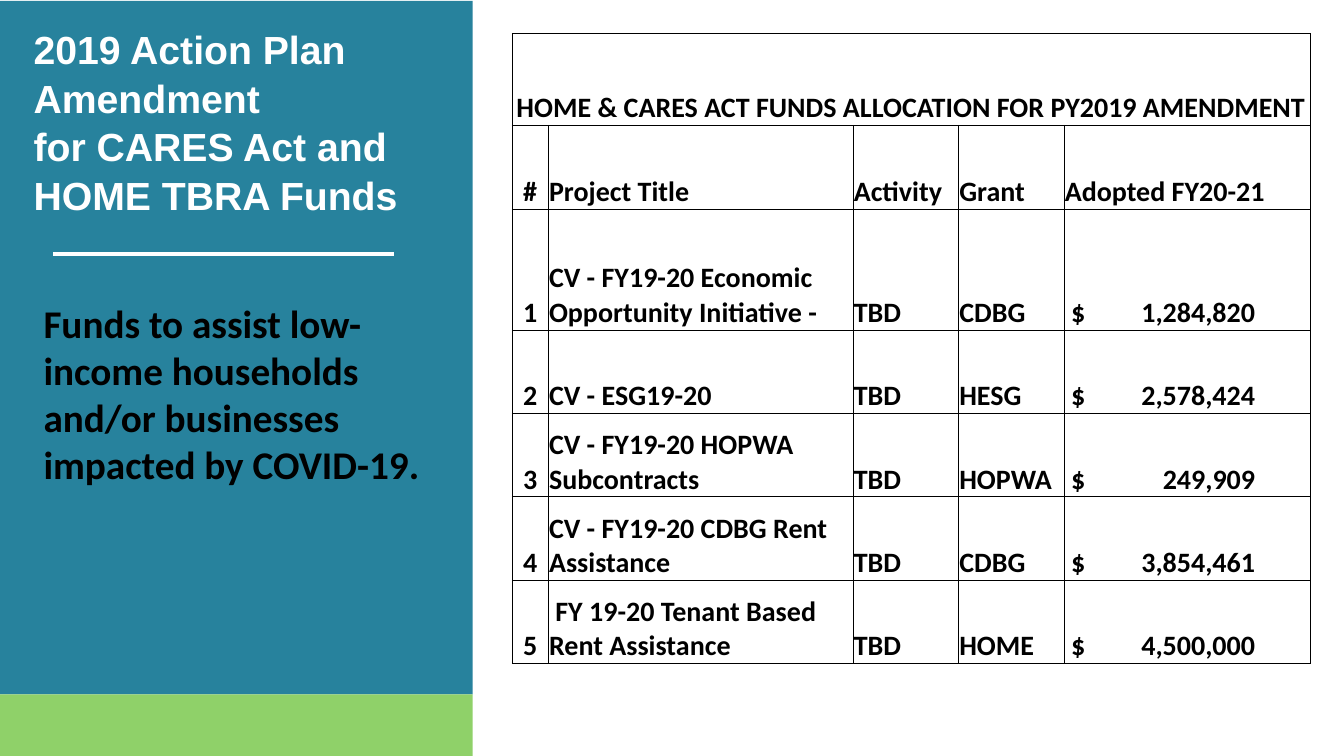
from lxml import etree
from pptx import Presentation
from pptx.dml.color import RGBColor
from pptx.enum import shapes, text
from pptx.oxml import ns
from pptx.util import Pt

TEAL = RGBColor(0x27, 0x82, 0x9D)
GREEN = RGBColor(0x8F, 0xD1, 0x69)
WHITE = RGBColor(0xFF, 0xFF, 0xFF)
BLACK = RGBColor(0x00, 0x00, 0x00)

TITLE = "2019 Action Plan Amendment \vfor CARES Act and HOME TBRA Funds"
PURPOSE = "Funds to assist low-income households and/or businesses impacted by COVID-19."
TABLE_TITLE = "HOME & CARES ACT FUNDS ALLOCATION FOR PY2019 AMENDMENT"
HEADERS = ("#", "Project Title", "Activity", "Grant", "Adopted FY20-21")
PROJECTS = [
    ("CV - FY19-20 Economic Opportunity Initiative -", "CDBG", "1,284,820"),
    ("CV - ESG19-20", "HESG", "2,578,424"),
    ("CV - FY19-20 HOPWA Subcontracts", "HOPWA", "249,909"),
    ("CV - FY19-20 CDBG Rent Assistance", "CDBG", "3,854,461"),
    (" FY 19-20 Tenant Based Rent Assistance", "HOME", "4,500,000"),
]
ACTIVITY = "TBD"

SLIDE_WIDTH, SLIDE_HEIGHT = 960, 540
PANEL_WIDTH, PANEL_TOP, PANEL_BOTTOM = 337.7, 0.7, 496
COLUMN_WIDTHS = (25.7, 217.7, 75.4, 75.4, 175.8)
ROW_HEIGHTS = (65.7, 59.7, 86.4) + (59.6,) * 4
AMOUNT_INDENT, AMOUNT_TAB = 5.3, 131.5


def write(frame, content, size=20, font="Calibri", color=BLACK,
          align=text.PP_ALIGN.LEFT, margins=(7.2, 3.6, 7.2, 3.6),
          line_spacing=None, space_before=None):
    """Fill a text frame with one bold paragraph; margins run left, top, right, bottom."""
    frame.word_wrap = True
    frame.margin_left, frame.margin_top, frame.margin_right, frame.margin_bottom = map(Pt, margins)
    paragraph = frame.paragraphs[0]
    paragraph.text = content
    paragraph.alignment = align
    if line_spacing:
        paragraph.line_spacing = Pt(line_spacing)
    if space_before:
        paragraph.space_before = Pt(space_before)
    for run in paragraph.runs:
        run.font.size = Pt(size)
        run.font.name = font
        run.font.bold = True
        run.font.color.rgb = color
    return paragraph


def add_panel(slide, top, bottom, color):
    panel = slide.shapes.add_shape(shapes.MSO_SHAPE.RECTANGLE, Pt(0), Pt(top),
                                   Pt(PANEL_WIDTH), Pt(bottom - top))
    panel.shadow.inherit = False
    panel.fill.solid()
    panel.fill.fore_color.rgb = color
    panel.line.fill.background()


def add_rule(slide, left, right, y):
    rule = slide.shapes.add_connector(shapes.MSO_CONNECTOR.STRAIGHT,
                                      Pt(left), Pt(y), Pt(right), Pt(y))
    rule.line.color.rgb = WHITE
    rule.line.width = Pt(2.58)
    etree.SubElement(rule._element.spPr, ns.qn("a:effectLst"))


def add_borders(cell):
    properties = cell._tc.get_or_add_tcPr()
    for side in ("a:lnL", "a:lnR", "a:lnT", "a:lnB"):
        line = etree.SubElement(properties, ns.qn(side), w=str(Pt(0.5)))
        fill = etree.SubElement(line, ns.qn("a:solidFill"))
        etree.SubElement(fill, ns.qn("a:srgbClr"), val=str(BLACK))


def add_right_tab(paragraph, position):
    tabs = etree.SubElement(paragraph._p.get_or_add_pPr(), ns.qn("a:tabLst"))
    etree.SubElement(tabs, ns.qn("a:tab"), pos=str(Pt(position)), algn="r")


def add_allocation_table(slide):
    rows = [(TABLE_TITLE,), HEADERS]
    for number, (project, grant, amount) in enumerate(PROJECTS, 1):
        rows.append((str(number), project, ACTIVITY, grant, f"$\t{amount}"))

    table = slide.shapes.add_table(len(rows), len(HEADERS), Pt(365.8), Pt(23.8),
                                   Pt(sum(COLUMN_WIDTHS)), Pt(sum(ROW_HEIGHTS))).table
    table.first_row = table.horz_banding = False
    for column, width in zip(table.columns, COLUMN_WIDTHS):
        column.width = Pt(width)
    for row, height in zip(table.rows, ROW_HEIGHTS):
        row.height = Pt(height)
    table.cell(0, 0).merge(table.cell(0, len(HEADERS) - 1))

    for cell in table.iter_cells():
        add_borders(cell)
        cell.fill.solid()
        cell.fill.fore_color.rgb = WHITE

    for row_index, row in enumerate(rows):
        for column_index, content in enumerate(row):
            cell = table.cell(row_index, column_index)
            is_amount = "\t" in content
            align = text.PP_ALIGN.LEFT if column_index else text.PP_ALIGN.CENTER
            paragraph = write(cell.text_frame, content, align=align)
            cell.vertical_anchor = text.MSO_ANCHOR.BOTTOM
            cell.margin_left = Pt(AMOUNT_INDENT if is_amount else 0.7)
            cell.margin_top = cell.margin_right = Pt(0.7)
            cell.margin_bottom = Pt(0)
            if is_amount:
                add_right_tab(paragraph, AMOUNT_TAB)


def main():
    presentation = Presentation()
    presentation.slide_width, presentation.slide_height = Pt(SLIDE_WIDTH), Pt(SLIDE_HEIGHT)
    slide = presentation.slides.add_slide(presentation.slide_layouts[6])

    add_panel(slide, PANEL_TOP, PANEL_BOTTOM, TEAL)
    add_panel(slide, PANEL_BOTTOM, SLIDE_HEIGHT, GREEN)
    add_rule(slide, 38, 281.5, 181.4)

    title = slide.shapes.add_textbox(Pt(24), Pt(12.2), Pt(313.7), Pt(217.4))
    write(title.text_frame, TITLE, size=28, font="Arial", color=WHITE,
          margins=(0, 5, 0, 0), line_spacing=34.7, space_before=5.2)
    purpose = slide.shapes.add_textbox(Pt(24), Pt(210.2), Pt(293.8), Pt(211))
    write(purpose.text_frame, PURPOSE, size=28)

    add_allocation_table(slide)
    presentation.save("out.pptx")


if __name__ == "__main__":
    main()
